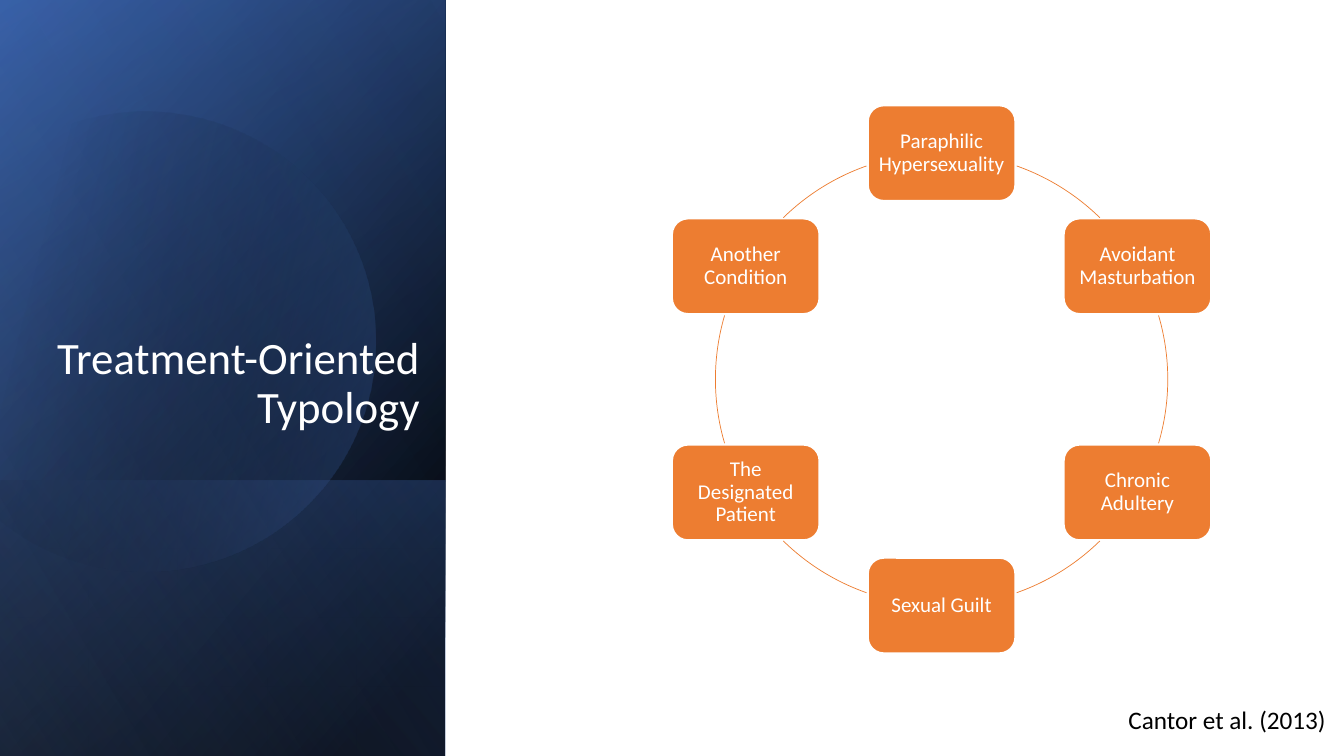
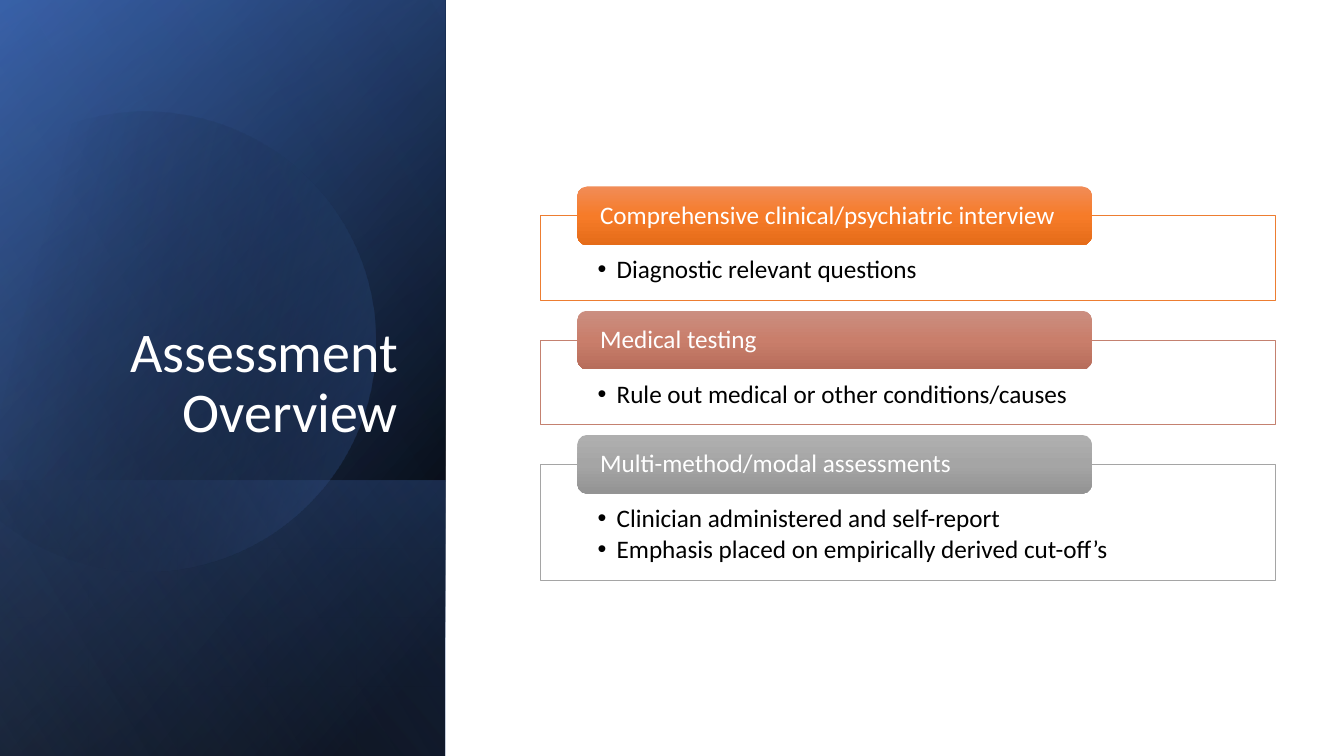
"""Build two slides on treatment typology and assessment."""
import math
from dataclasses import dataclass

from lxml import etree
from pptx import Presentation
from pptx import util as u
from pptx.dml import color
from pptx.enum import shapes, text
from pptx.oxml import ns

Cm, Pt = u.Cm, u.Pt
KIND, ALIGN, ANCHOR = shapes.MSO_SHAPE, text.PP_ALIGN, text.MSO_ANCHOR


@dataclass(frozen=True)
class Theme:
    """Colours, type sizes and page measures, lengths in centimetres."""

    font: str = "Calibri"
    white: str = "FFFFFF"
    black: str = "000000"
    navy: str = "2F5597"
    blue: str = "4472C4"
    pale: str = "8FAADC"
    orange: str = "ED7D31"
    rose: str = "C48170"
    grey: str = "A5A5A5"
    node: int = 15
    body: int = 18
    width: float = 33.87
    height: float = 19.05
    side: float = 11.22


T = Theme()
TYPES = ["Paraphilic Hypersexuality", "Avoidant Masturbation", "Chronic Adultery",
         "Sexual Guilt", "The Designated Patient", "Another Condition"]
CARDS = [
    ("Comprehensive clinical/psychiatric interview", ["Diagnostic relevant questions"],
     T.orange, ["F18C57", "F67B28", "E56C19"]),
    ("Medical testing", ["Rule out medical or other conditions/causes"],
     T.rose, ["CB8F81", "C97E6B", "B76D5B"]),
    ("Multi-method/modal assessments",
     ["Clinician administered and self-report",
      "Emphasis placed on empirically derived cut-off’s"],
     T.grey, ["AFAFAF", "A5A5A5", "939393"]),
]


def rgb(code):
    """Turn a hex code into a colour."""
    return color.RGBColor.from_string(code)


def gradient(sp, stops, angle):
    """Fill a shape with (position %, colour, opacity %) stops."""
    sp.fill.background()
    pr = sp._element.spPr
    grad = etree.Element(ns.qn("a:gradFill"), rotWithShape="1")
    gs_list = etree.SubElement(grad, ns.qn("a:gsLst"))
    for pos, code, opacity in stops:
        gs = etree.SubElement(gs_list, ns.qn("a:gs"), pos=str(pos * 1000))
        clr = etree.SubElement(gs, ns.qn("a:srgbClr"), val=code)
        if opacity < 100:
            etree.SubElement(clr, ns.qn("a:alpha"), val=str(opacity * 1000))
    etree.SubElement(grad, ns.qn("a:lin"), ang=str(angle * 60000), scaled="0")
    pr.replace(pr.find(ns.qn("a:noFill")), grad)


def style(sp, fill=None, line=None, weight=0.5):
    """Set plain fill and outline, without shadow."""
    sp.shadow.inherit = False
    if fill:
        sp.fill.solid()
        sp.fill.fore_color.rgb = rgb(fill)
    else:
        sp.fill.background()
    if line:
        sp.line.color.rgb = rgb(line)
        sp.line.width = Pt(weight)
    else:
        sp.line.fill.background()
    return sp


def add_box(s, kind, box, **look):
    """Add a styled preset shape."""
    return style(s.shapes.add_shape(kind, *map(Cm, box)), **look)


def bullet(p):
    """Give a paragraph a hanging bullet."""
    pr = p._p.get_or_add_pPr()
    pr.set("marL", str(Cm(0.48)))
    pr.set("indent", str(-Cm(0.48)))
    etree.SubElement(pr, ns.qn("a:buFont"), typeface="Arial")
    etree.SubElement(pr, ns.qn("a:buChar"), char="•")


def write(sp, lines, size, ink, align=ALIGN.LEFT, anchor=ANCHOR.MIDDLE,
          insets=(0.25, 0.13, 0.25, 0.13), bullets=False, spacing=0.9, wrap=True):
    """Write paragraphs of one style into a shape."""
    tf = sp.text_frame
    tf.word_wrap = wrap
    tf.vertical_anchor = anchor
    tf.margin_left, tf.margin_top, tf.margin_right, tf.margin_bottom = map(Cm, insets)
    for i, line in enumerate(lines):
        p = tf.paragraphs[0] if i == 0 else tf.add_paragraph()
        p.text = line
        p.alignment = align
        p.line_spacing = spacing
        if bullets:
            p.space_after = Pt(3)
            bullet(p)
        p.font.name, p.font.size, p.font.color.rgb = T.font, Pt(size), rgb(ink)


def add_path_step(route, tag, points):
    """Append one drawing step to a freeform outline."""
    step = etree.SubElement(route, ns.qn(tag))
    for x, y in points:
        etree.SubElement(step, ns.qn("a:pt"), x=str(Cm(x)), y=str(Cm(y)))


def add_arc(s, cx, cy, radius, start, end, left=None, close=False):
    """Draw a curved arc, in degrees clockwise from the top, framed by its circle."""
    left = cx - radius if left is None else left
    right, top, bottom = cx + radius, cy - radius, cy + radius
    builder = s.shapes.build_freeform(Cm(left), Cm(top))
    builder.add_line_segments([(Cm(right), Cm(bottom))], close=False)
    sp = builder.convert_to_shape()
    route = sp._element.spPr.find(".//" + ns.qn("a:path"))
    for step in list(route):
        route.remove(step)

    def spot(angle, pull=0):
        """Give a point on the arc, moved along its tangent."""
        sin, cos = math.sin(angle), math.cos(angle)
        return (cx - left + radius * (sin + pull * cos),
                radius * (1 - cos + pull * sin))

    count = math.ceil((end - start) / 90)
    turn = math.radians(end - start) / count
    pull = 4 / 3 * math.tan(turn / 4)
    a = math.radians(start)
    add_path_step(route, "a:moveTo", [spot(a)])
    for _ in range(count):
        b = a + turn
        add_path_step(route, "a:cubicBezTo", [spot(a, pull), spot(b, -pull), spot(b)])
        a = b
    if close:
        etree.SubElement(route, ns.qn("a:close"))
    return sp


def add_panel(s, top, stops, angle):
    """Add a turned, mirrored gradient panel from top to the page bottom."""
    h = T.height - top
    shift = (T.side - h) / 2
    sp = add_box(s, KIND.RECTANGLE, (shift, top - shift, h, T.side))
    sp.rotation = 90
    sp._element.spPr.xfrm.set("flipH", "1")
    gradient(sp, stops, angle)


def add_sidebar(s, title, size, box):
    """Add the blue side band and its title."""
    add_panel(s, 0, [(8, T.black, 100), (100, T.navy, 100)], 50)
    add_panel(s, 0, [(0, T.black, 0), (99, T.blue, 46)], 30)
    add_panel(s, 12.1, [(2, T.blue, 29), (100, T.black, 30)], 130)
    disc = style(add_arc(s, 3.64, 8.5, 5.8, -28, 240.2, left=-1.4, close=True))
    disc.rotation = 343.9
    gradient(disc, [(29, T.black, 0), (100, T.blue, 43)], 30)
    add_panel(s, 0, [(0, T.black, 0), (99, T.pale, 11)], 120)
    write(s.shapes.add_textbox(*map(Cm, box)), [title], size, T.white,
          ALIGN.RIGHT, ANCHOR.BOTTOM)


def add_cycle(s, labels, cx=23.73, cy=9.56, radius=5.7, w=3.72, h=2.41):
    """Set labelled nodes round a circle, joined by arcs."""
    for i, label in enumerate(labels):
        a = math.radians(360 * i / len(labels))
        x, y = cx + radius * math.sin(a), cy - radius * math.cos(a)
        node = add_box(s, KIND.ROUNDED_RECTANGLE, (x - w / 2, y - h / 2, w, h),
                       fill=T.orange, line=T.white, weight=1.5)
        write(node, [label], T.node, T.white, ALIGN.CENTER, insets=(0.13,) * 4)
    for turn in (0, 180):
        for start, end in ((19.4, 44.4), (73.6, 106.4), (135.6, 160.6)):
            style(add_arc(s, cx, cy, radius, start + turn, end + turn), line=T.orange)


def add_cards(s, cards, left=13.61, top=5.44, gap=1):
    """Stack outlined cards, each with a gradient label on its top edge."""
    for label, points, line, shades in cards:
        h = 1.34 + 0.79 * len(points)
        card = add_box(s, KIND.RECTANGLE, (left, top, 18.52, h), fill=T.white, line=line)
        write(card, points, T.body, T.black, anchor=ANCHOR.TOP,
              insets=(1.45, 1.04, 1.45, 0.36), bullets=True)
        tab = add_box(s, KIND.ROUNDED_RECTANGLE, (left + 0.94, top - 0.74, 12.97, 1.48))
        gradient(tab, [(50 * i, c, 100) for i, c in enumerate(shades)], 90)
        write(tab, [label], T.body, T.white, insets=(0.5, 0, 0.48, 0))
        top += h + gap


def main():
    """Build and save both slides."""
    prs = Presentation()
    prs.slide_width, prs.slide_height = Cm(T.width), Cm(T.height)
    blank = prs.slide_layouts[6]

    s = prs.slides.add_slide(blank)
    add_box(s, KIND.RECTANGLE, (0, 0, T.width, T.height), fill=T.white)
    add_sidebar(s, "Treatment-Oriented Typology", 32, (0.6, 1.63, 10.23, 9.41))
    add_cycle(s, TYPES)
    source = s.shapes.add_textbox(Cm(28.19), Cm(17.63), Cm(5.54), Cm(1.02))
    write(source, ["Cantor et al. (2013)"], T.body, T.black, anchor=ANCHOR.TOP,
          spacing=1.0, wrap=False)

    s = prs.slides.add_slide(blank)
    add_sidebar(s, "Assessment Overview", 40, (1.62, 4.67, 8.66, 6.67))
    add_cards(s, CARDS)

    prs.save("out.pptx")


if __name__ == "__main__":
    main()
